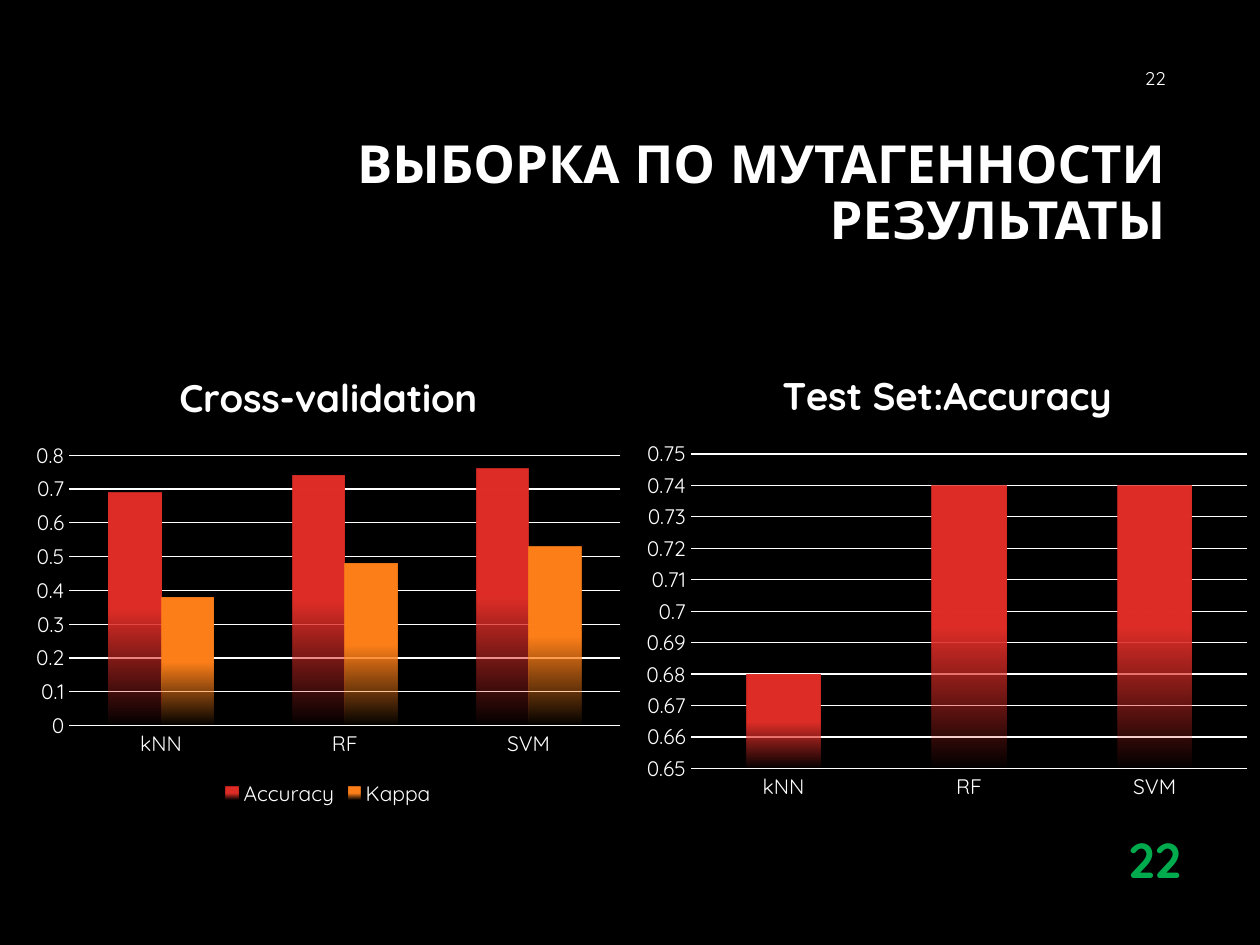
from dataclasses import dataclass

from lxml.etree import SubElement
from pptx import Presentation
from pptx.chart.data import CategoryChartData
from pptx.dml.color import RGBColor
from pptx.enum.chart import XL_CHART_TYPE as ChartType
from pptx.enum.chart import XL_LEGEND_POSITION as LegendPosition
from pptx.enum.chart import XL_TICK_MARK as TickMark
from pptx.enum.text import MSO_ANCHOR as Anchor
from pptx.enum.text import PP_ALIGN as Align
from pptx.oxml.ns import qn
from pptx.util import Pt


@dataclass(frozen=True)
class Theme:
    font: str = "Quicksand"
    background: str = "000000"
    text: str = "FFFFFF"
    number: str = "00AB4E"
    bars: tuple[str, ...] = ("DF2E28", "FE801A")
    title_size: float = 30
    number_size: float = 28
    chart_title_size: float = 22
    label_size: float = 12
    small_size: float = 10.5


@dataclass(frozen=True)
class Box:
    left: float
    top: float
    width: float
    height: float

    def lengths(self) -> list[Pt]:
        return [Pt(value) for value in (self.left, self.top, self.width, self.height)]


@dataclass(frozen=True)
class ColumnChart:
    title: str
    box: Box
    series: dict[str, tuple[float, ...]]
    minimum: float
    maximum: float
    step: float
    legend: bool = False


THEME = Theme()
MODELS = ("kNN", "RF", "SVM")
CHARTS = (
    ColumnChart(
        "Cross-validation", Box(13.7, 198, 347.8, 265.7),
        {"Accuracy": (0.69, 0.74, 0.76), "Kappa": (0.38, 0.48, 0.53)},
        0, 0.8, 0.1, legend=True,
    ),
    ColumnChart(
        "Test Set:Accuracy", Box(362.2, 197.3, 357.8, 265),
        {"Series 1": (0.68, 0.74, 0.74)}, 0.65, 0.75, 0.01,
    ),
)


def format_font(font, size: float, color: str = THEME.text, bold: bool = False) -> None:
    font.name = THEME.font
    font.size = Pt(size)
    font.bold = bold
    font.color.rgb = RGBColor.from_string(color)


def write_text(shape, text: str, *, box: Box, size: float, color: str = THEME.text,
               bold: bool = False, line_spacing: float = 1.0) -> None:
    """Place a shape and fill it with right-aligned, vertically centred text."""
    shape.left, shape.top, shape.width, shape.height = box.lengths()
    frame = shape.text_frame
    frame.word_wrap = True
    frame.vertical_anchor = Anchor.MIDDLE
    paragraph = frame.paragraphs[0]
    paragraph.text = text
    paragraph.alignment = Align.RIGHT
    paragraph.line_spacing = line_spacing
    for run in paragraph.runs:
        format_font(run.font, size, color, bold)


def fade_fill(series, color: str) -> None:
    """Fill the bars with a colour that fades out over the lower half."""
    fill = series.format.fill
    fill.gradient()
    fill.gradient_angle = 270
    for stop, position in zip(fill.gradient_stops, (0.5, 1)):
        stop.position = position
        stop.color.rgb = RGBColor.from_string(color)
    last_color = list(series._element.iter(qn("a:srgbClr")))[-1]
    SubElement(last_color, qn("a:alpha"), val="0")


def format_axis(axis) -> None:
    axis.major_tick_mark = axis.minor_tick_mark = TickMark.NONE
    axis.format.line.fill.background()
    format_font(axis.tick_labels.font, THEME.label_size)


def draw_chart(slide, item: ColumnChart) -> None:
    data = CategoryChartData()
    data.categories = MODELS
    for name, values in item.series.items():
        data.add_series(name, values)
    chart = slide.shapes.add_chart(
        ChartType.COLUMN_CLUSTERED, *item.box.lengths(), data).chart
    format_font(chart.font, THEME.label_size)

    # Title and legend
    chart.has_title = True
    chart.chart_title.include_in_layout = False
    paragraph = chart.chart_title.text_frame.paragraphs[0]
    paragraph.text = item.title
    format_font(paragraph.runs[0].font, THEME.chart_title_size, bold=True)
    chart.has_legend = item.legend
    if item.legend:
        chart.legend.position = LegendPosition.BOTTOM
        chart.legend.include_in_layout = False
        format_font(chart.legend.font, THEME.label_size)

    # Axes and gridlines
    format_axis(chart.category_axis)
    axis = chart.value_axis
    format_axis(axis)
    axis.minimum_scale, axis.maximum_scale = item.minimum, item.maximum
    axis.major_unit = item.step
    axis.has_major_gridlines = True
    grid = axis.major_gridlines.format.line
    grid.width = Pt(0.75)
    grid.color.rgb = RGBColor.from_string(THEME.text)

    # Bars
    plot = chart.plots[0]
    plot.vary_by_categories = False
    plot.gap_width = 150
    plot.overlap = 0
    for series, color in zip(plot.series, THEME.bars):
        fade_fill(series, color)


def main() -> None:
    presentation = Presentation()
    presentation.slide_width, presentation.slide_height = Pt(720), Pt(540)
    slide = presentation.slides.add_slide(presentation.slide_layouts[5])
    background = slide.background.fill
    background.solid()
    background.fore_color.rgb = RGBColor.from_string(THEME.background)

    # Title and upper slide number
    write_text(slide.shapes.title, "ВЫБОРКА ПО МУТАГЕННОСТИ\vРЕЗУЛЬТАТЫ",
               box=Box(171.4, 60.5, 501.8, 101.5), size=THEME.title_size,
               bold=True, line_spacing=0.9)
    upper_box = Box(517.7, 30.2, 155.5, 28.8)
    write_text(slide.shapes.add_textbox(*upper_box.lengths()), "22",
               box=upper_box, size=THEME.small_size)

    # Charts
    for item in CHARTS:
        draw_chart(slide, item)

    # Large slide number
    lower_box = Box(626.4, 476.6, 55.4, 28.8)
    write_text(slide.shapes.add_textbox(*lower_box.lengths()), "22", box=lower_box,
               size=THEME.number_size, color=THEME.number, bold=True)

    presentation.save("out.pptx")


if __name__ == "__main__":
    main()
